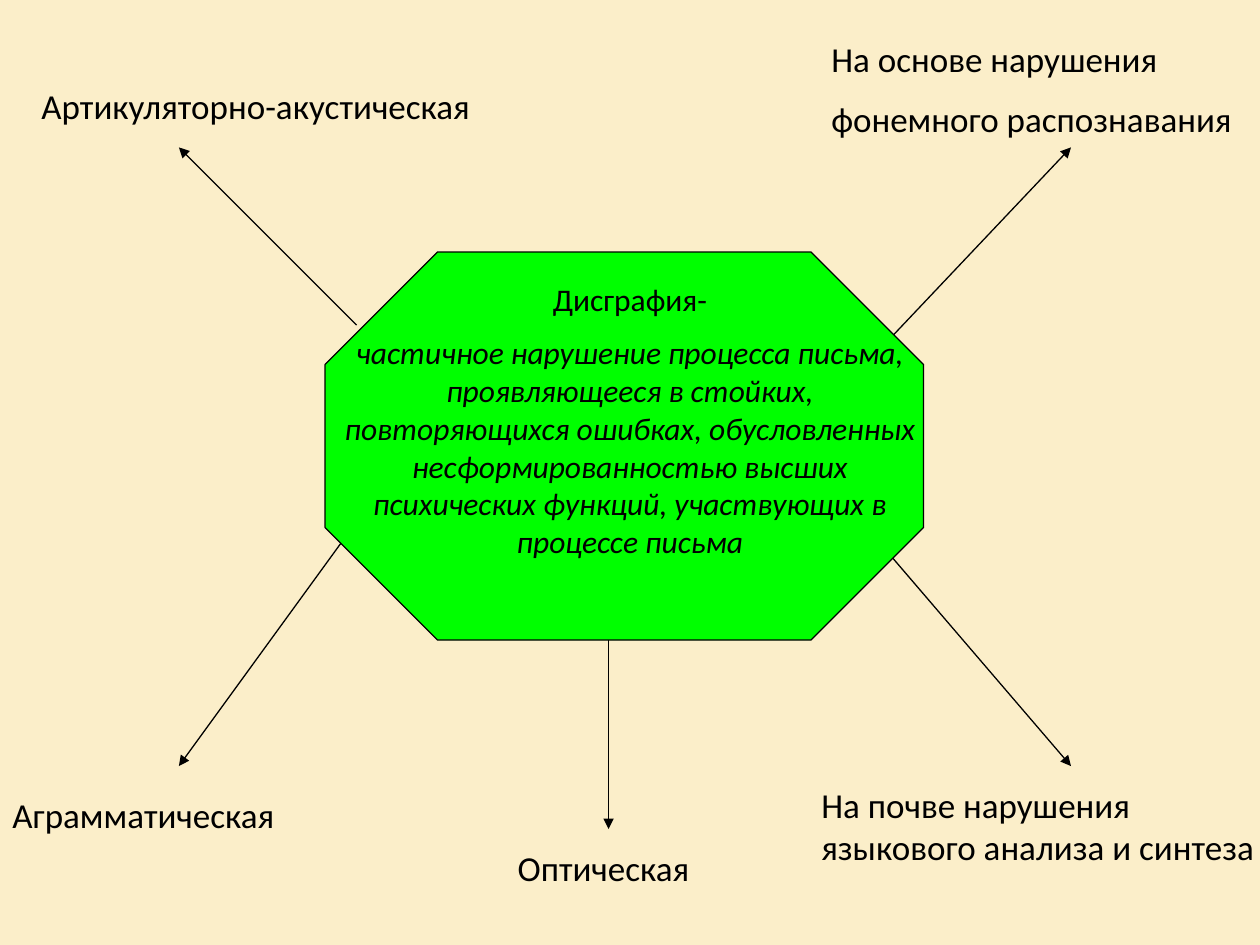
import dataclasses

import pptx
import pptx.dml.color
import pptx.enum.shapes
import pptx.enum.text
import pptx.oxml.ns
import pptx.util
from lxml import etree

Inches = pptx.util.Inches
ALIGN = pptx.enum.text.PP_ALIGN


@dataclasses.dataclass(frozen=True)
class Theme:
    font: str = "Calibri"
    background: str = "FBEEC9"
    ink: str = "000000"
    accent: str = "00FF00"
    label_size: int = 20
    body_size: int = 18
    line_width: float = 0.75


def color(code):
    return pptx.dml.color.RGBColor.from_string(code)


class Page:
    def __init__(self, deck, theme):
        self.theme = theme
        self.slide = deck.slides.add_slide(deck.slide_layouts[6])
        fill = self.slide.background.fill
        fill.solid()
        fill.fore_color.rgb = color(theme.background)

    def outline(self, line):
        line.color.rgb = color(self.theme.ink)
        line.width = pptx.util.Pt(self.theme.line_width)

    def arrow(self, start, end):
        arrow = self.slide.shapes.add_connector(
            pptx.enum.shapes.MSO_CONNECTOR.STRAIGHT,
            *map(Inches, (*start, *end)))
        self.outline(arrow.line)
        qn = pptx.oxml.ns.qn
        etree.SubElement(arrow.line._get_or_add_ln(), qn("a:tailEnd"), type="triangle")
        etree.SubElement(arrow._element.spPr, qn("a:effectLst"))

    def octagon(self, left, top, width, height):
        box = self.slide.shapes.add_shape(
            pptx.enum.shapes.MSO_SHAPE.OCTAGON,
            *map(Inches, (left, top, width, height)))
        box.adjustments[0] = 0.29
        box.shadow.inherit = False
        box.fill.solid()
        box.fill.fore_color.rgb = color(self.theme.accent)
        self.outline(box.line)

    def text(self, place, paragraphs, size, align=ALIGN.LEFT):
        """Write (text, italic) paragraphs, spaced by half the type size."""
        frame = self.slide.shapes.add_textbox(*map(Inches, place)).text_frame
        frame.word_wrap = True
        for index, (words, italic) in enumerate(paragraphs):
            para = frame.add_paragraph() if index else frame.paragraphs[0]
            para.text = words
            para.alignment = align
            if index:
                para.space_before = pptx.util.Pt(size / 2)
            style = {"name": self.theme.font, "size": pptx.util.Pt(size), "italic": italic}
            for span in para.runs:
                for key, value in style.items():
                    setattr(span.font, key, value)
                span.font.color.rgb = color(self.theme.ink)


ARROWS = [
    ((2.83, 2.58), (1.42, 1.17)),
    ((7.08, 2.67), (8.5, 1.17)),
    ((4.83, 4.5), (4.83, 6.58)),
    ((2.75, 4.25), (1.42, 6.08)),
    ((7, 4.33), (8.5, 6.08)),
]
# A "\v" is a line break within a paragraph.
LABELS = [
    ((0.23, 0.62, 4.5, 0.43), ["Артикуляторно-акустическая"], ALIGN.LEFT),
    ((6.5, 0.25, 3.5, 0.93), ["На основе нарушения", "фонемного распознавания"], ALIGN.LEFT),
    ((3.58, 6.67, 2.42, 0.43), ["Оптическая"], ALIGN.CENTER),
    ((6.42, 6.17, 3.92, 0.77), ["На почве нарушения\vязыкового анализа и синтеза"], ALIGN.LEFT),
    ((0, 6.25, 3.08, 0.43), ["Аграмматическая"], ALIGN.LEFT),
]
DEFINITION = [
    ("Дисграфия-", False),
    ("частичное нарушение процесса письма, проявляющееся в стойких,\v"
     "повторяющихся ошибках, обусловленных несформированностью высших "
     "психических функций, участвующих в процессе письма", True),
]


def main():
    deck = pptx.Presentation()
    deck.slide_width, deck.slide_height = Inches(10), Inches(7.5)
    theme = Theme()
    page = Page(deck, theme)
    for start, end in ARROWS:
        page.arrow(start, end)
    for place, lines, align in LABELS:
        page.text(place, [(line, False) for line in lines], theme.label_size, align)
    page.octagon(2.58, 2, 4.75, 3.08)
    page.text((2.5, 2.17, 5, 2.15), DEFINITION, theme.body_size, ALIGN.CENTER)
    deck.save("out.pptx")


if __name__ == "__main__":
    main()
